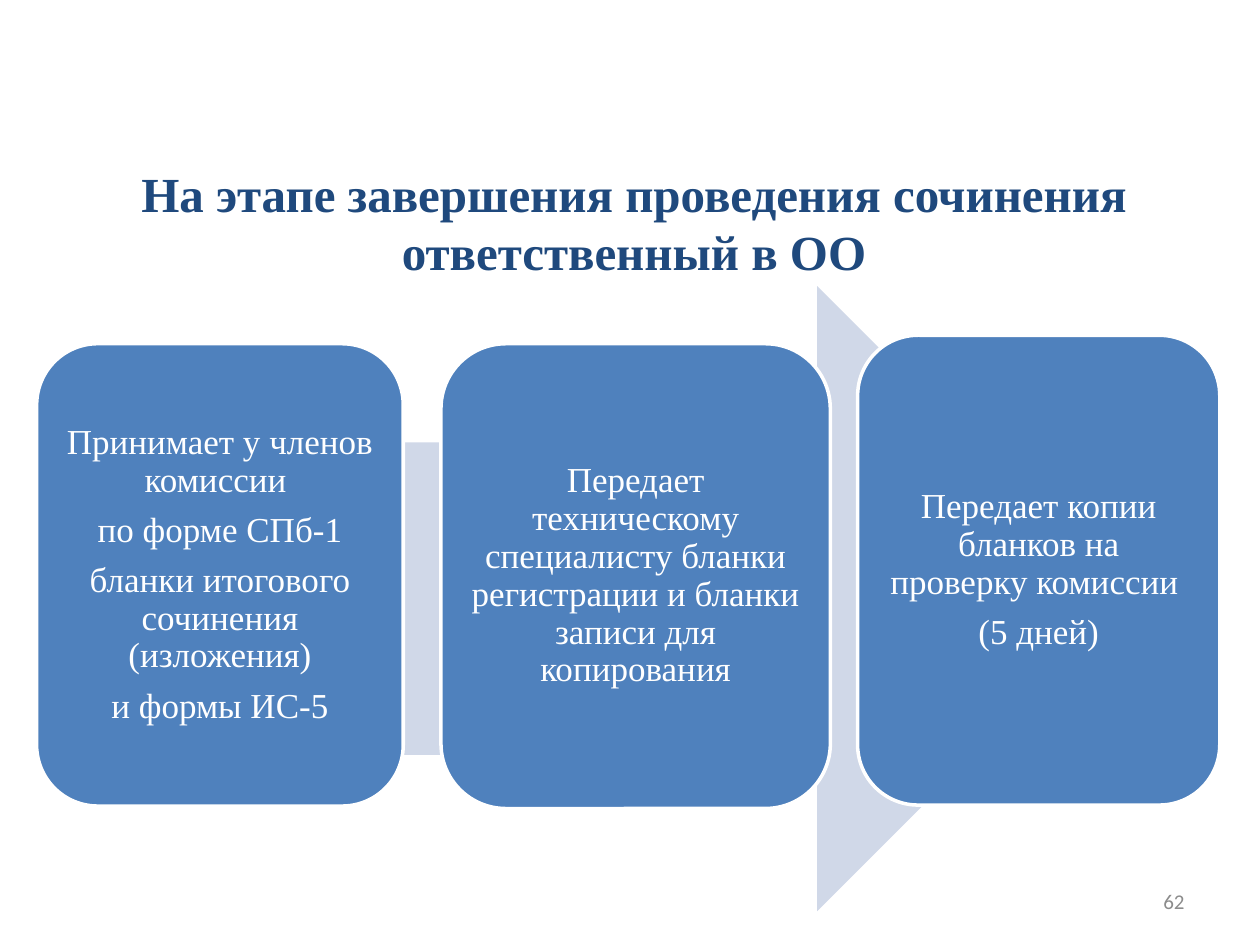
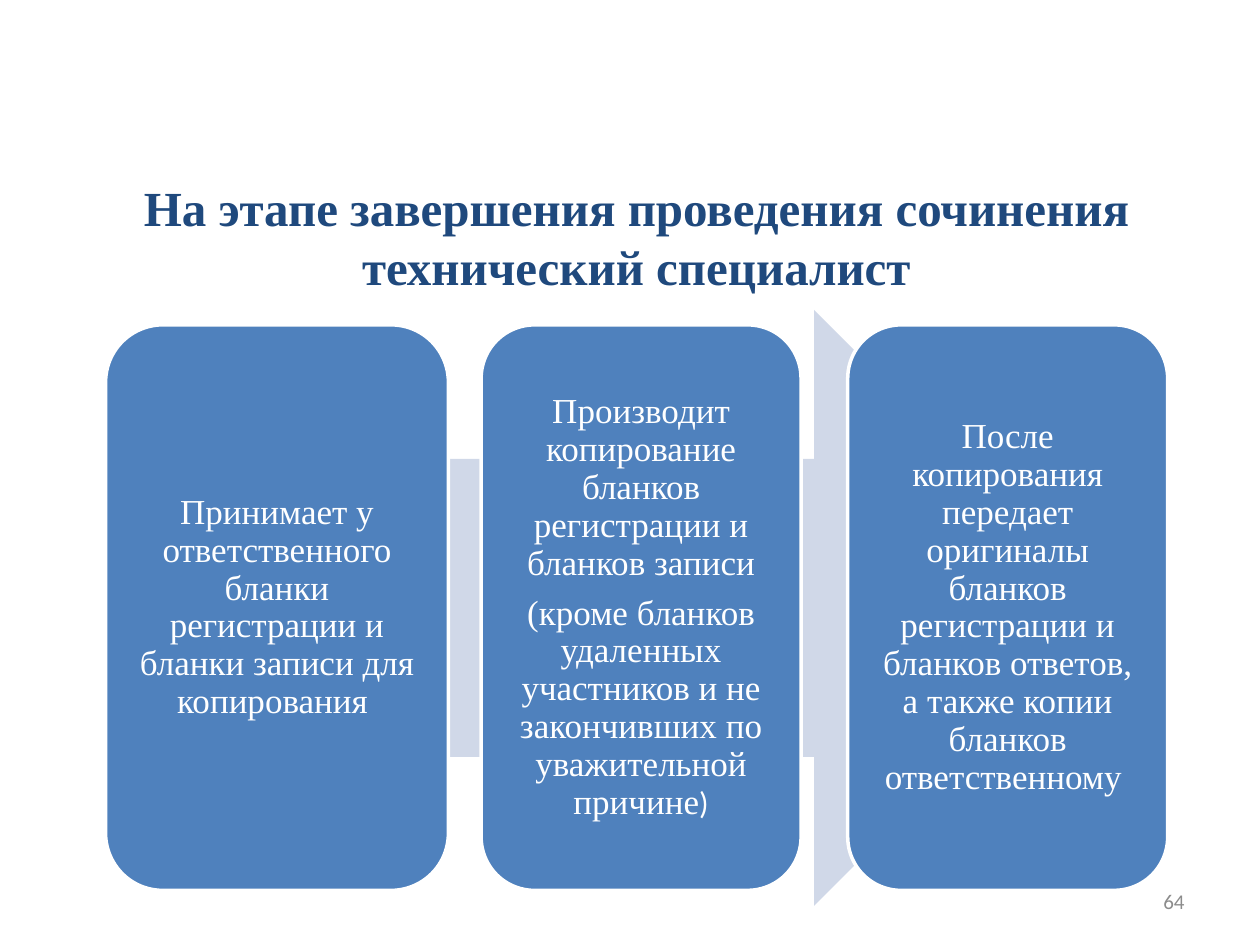
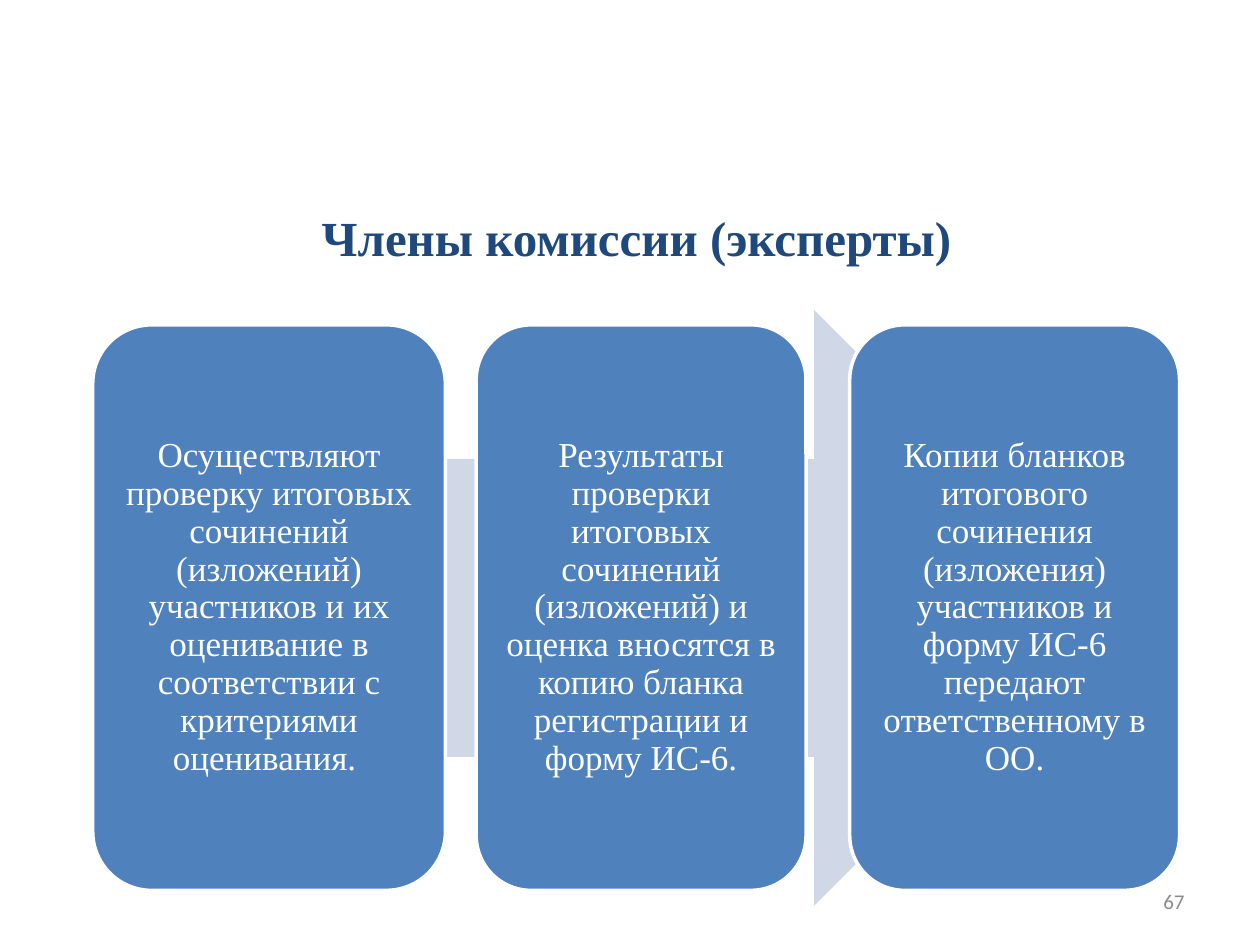
import pptx
import pptx.util
import pptx.dml.color
import pptx.enum.shapes
import pptx.enum.text

Cm = pptx.util.Cm
Pt = pptx.util.Pt
RGB = pptx.dml.color.RGBColor
Shape = pptx.enum.shapes.MSO_SHAPE
Align = pptx.enum.text.PP_ALIGN
Anchor = pptx.enum.text.MSO_ANCHOR

NAVY = RGB(0x1F, 0x49, 0x7D)
BLUE = RGB(0x4F, 0x81, 0xBD)
PALE = RGB(0xD0, 0xD8, 0xE8)
GRAY = RGB(0x8C, 0x8C, 0x8C)
WHITE = RGB(0xFF, 0xFF, 0xFF)
SERIF = "Times New Roman"
SANS = "Calibri"

NUMBER = (18.21, 17.65, 5.92, 1.02)
TITLE = (1.4, 3.18, 22.86, 3.18)
FLOW = (1.27, 6.25, 22.86, 12.01)

SLIDES = [
    {
        "number": "62",
        "title": "На этапе завершения проведения сочинения ответственный в ОО",
        "head": (1.35, 3.18, 22.86, 2.59),
        "flow": (0.39, 5.77, 24.2, 12.6),
        "steps": [
            ((0.35, 1.16, 7.39, 9.32), [
                "Принимает у членов комиссии ",
                "по форме СПб-1",
                "бланки итогового сочинения (изложения)",
                "и формы ИС-5",
            ]),
            ((8.5, 1.16, 7.85, 9.37), [
                "Передает техническому специалисту бланки регистрации "
                "и бланки записи для копирования",
            ]),
            ((16.9, 0.99, 7.3, 9.47), [
                "Передает копии бланков на проверку комиссии ",
                "(5 дней)",
            ]),
        ],
    },
    {
        "number": "64",
        "title": "На этапе завершения проведения сочинения технический специалист",
        "head": TITLE,
        "flow": FLOW,
        "steps": [
            ((0.86, 0.3, 6.91, 11.4), [
                "Принимает у ответственного бланки регистрации "
                "и бланки записи для копирования ",
            ]),
            ((8.43, 0.3, 6.45, 11.4), [
                "Производит копирование бланков регистрации и бланков записи",
                ("(кроме бланков удаленных участников и не закончивших "
                 "по уважительной причине", ")"),
            ]),
            ((15.82, 0.3, 6.45, 11.4), [
                "После копирования передает оригиналы бланков регистрации "
                "и бланков ответов, а также копии бланков ответственному ",
            ]),
        ],
    },
    {
        "number": "67",
        "title": "Члены комиссии (эксперты)",
        "head": TITLE,
        "flow": FLOW,
        "steps": [
            ((0.6, 0.3, 7.11, 11.4), [
                "Осуществляют проверку итоговых сочинений (изложений) "
                "участников и их оценивание в соответствии "
                "с критериями оценивания. ",
            ]),
            ((8.33, 0.3, 6.65, 11.4), [
                "Результаты проверки итоговых сочинений (изложений) "
                "и оценка вносятся в копию бланка регистрации и форму ИС-6.",
            ]),
            ((15.86, 0.3, 6.65, 11.4), [
                "Копии бланков итогового сочинения (изложения) участников "
                "и форму ИС-6 передают ответственному в ОО.",
            ]),
        ],
    },
]


def style(font, name, size, color, bold=False):
    font.name = name
    font.size = Pt(size)
    font.color.rgb = color
    font.bold = bold


def add_label(slide, box, text, align, *look):
    frame = slide.shapes.add_textbox(*map(Cm, box)).text_frame
    frame.word_wrap = True
    frame.vertical_anchor = Anchor.MIDDLE
    para = frame.paragraphs[0]
    para.text = text
    para.alignment = align
    style(para.font, *look)


def add_block(slide, kind, box, fill):
    block = slide.shapes.add_shape(kind, *map(Cm, box))
    block.shadow.inherit = False
    block.fill.solid()
    block.fill.fore_color.rgb = fill
    block.line.fill.background()
    return block


def add_step(slide, box, lines):
    card = add_block(slide, Shape.ROUNDED_RECTANGLE, box, BLUE)
    card.line.color.rgb = WHITE
    card.line.width = Pt(2)
    frame = card.text_frame
    frame.word_wrap = True
    frame.vertical_anchor = Anchor.MIDDLE
    frame.margin_left = frame.margin_right = Cm(0.22)
    frame.margin_top = frame.margin_bottom = Cm(0.22)
    for index, line in enumerate(lines):
        para = frame.add_paragraph() if index else frame.paragraphs[0]
        body, tail = (line, "") if isinstance(line, str) else line
        para.alignment = Align.CENTER
        para.line_spacing = 0.9
        para.space_after = Pt(7)
        style(para.font, SERIF, 20, WHITE)
        para.add_run().text = body
        if tail:
            run = para.add_run()
            run.text = tail
            style(run.font, SANS, 18, WHITE)


def add_flow(slide, box, steps):
    left, top, width, height = box
    arrow = (left + 0.075 * width, top, 0.85 * width, height)
    add_block(slide, Shape.RIGHT_ARROW, arrow, PALE)
    for (x, y, wide, high), lines in steps:
        add_step(slide, (left + x, top + y, wide, high), lines)


def main():
    deck = pptx.Presentation()
    deck.slide_width = Cm(25.4)
    deck.slide_height = Cm(19.05)
    for data in SLIDES:
        slide = deck.slides.add_slide(deck.slide_layouts[6])
        add_label(slide, NUMBER, data["number"], Align.RIGHT, SANS, 12, GRAY)
        add_label(slide, data["head"], data["title"], Align.CENTER,
                  SERIF, 28, NAVY, True)
        add_flow(slide, data["flow"], data["steps"])
    deck.save("out.pptx")


if __name__ == "__main__":
    main()
